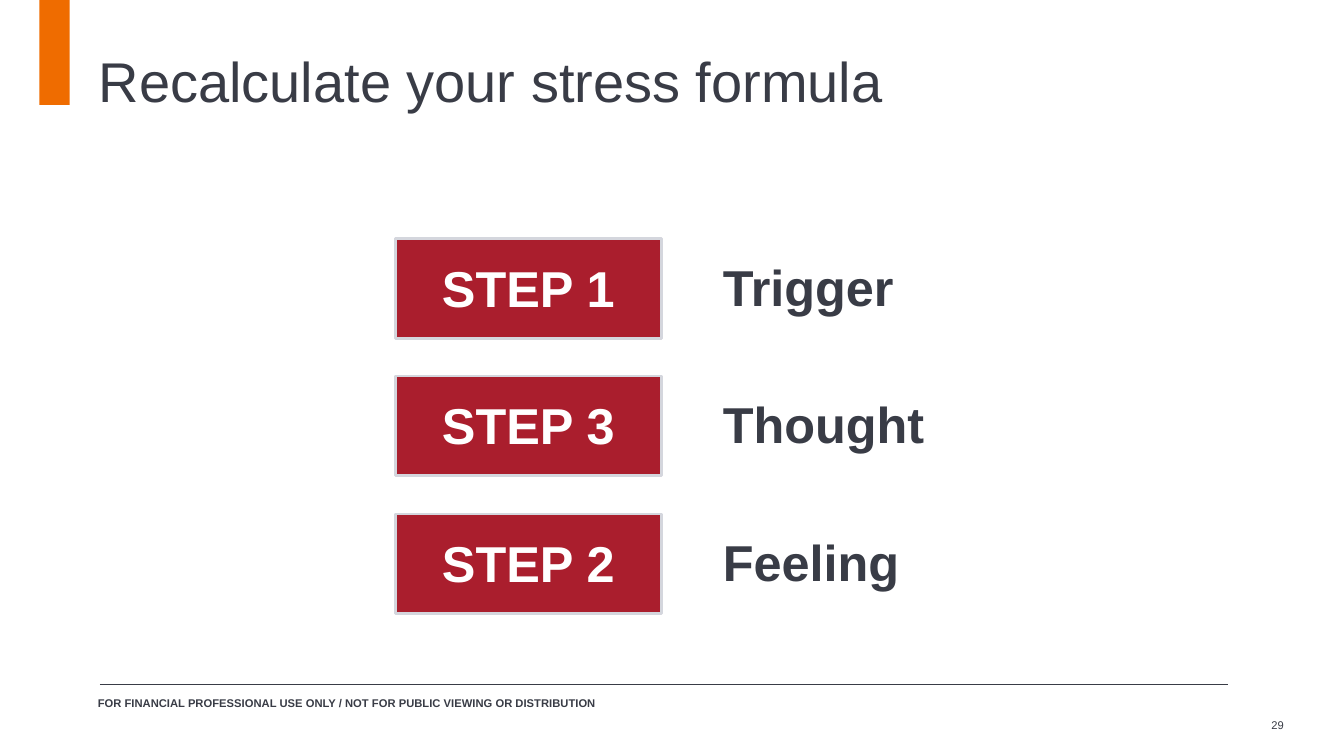
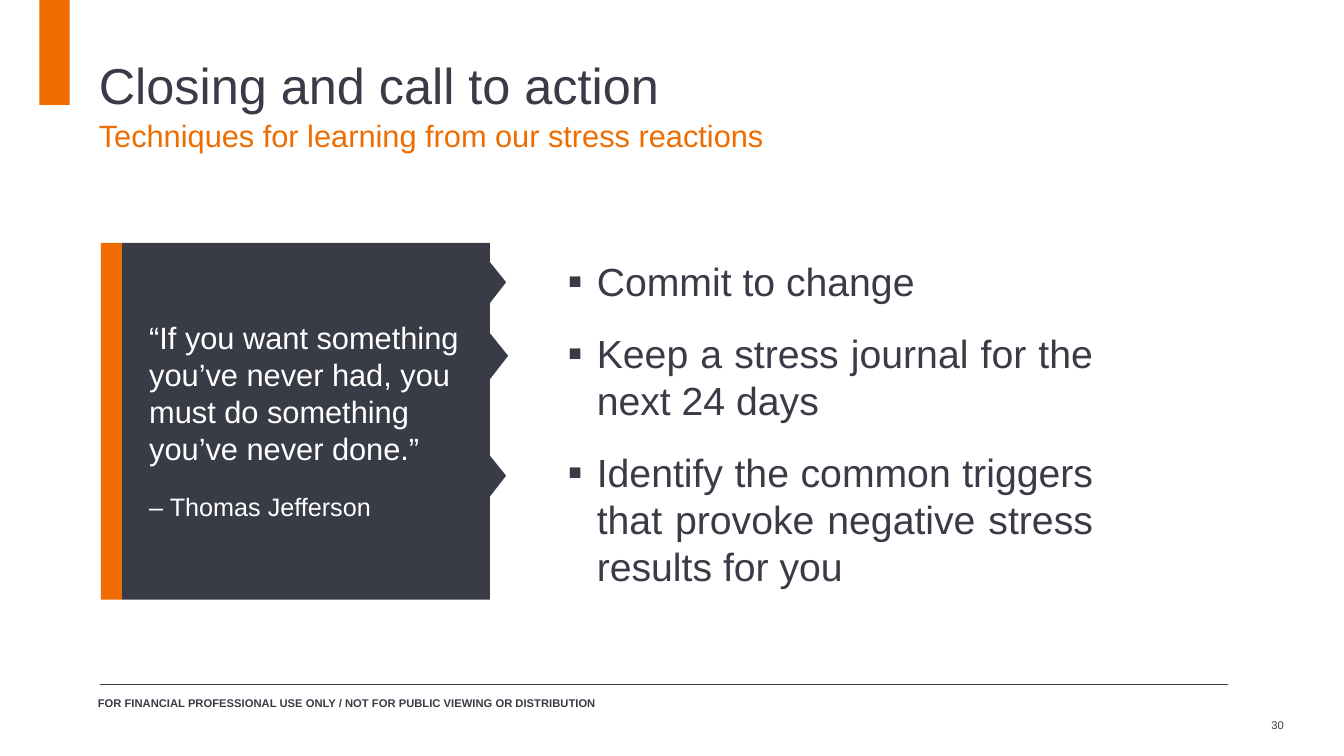
"""Build two slides on stress: the three steps and the closing call to action."""
from typing import NamedTuple

from lxml.etree import SubElement
from pptx import Presentation
from pptx.dml.color import RGBColor
from pptx.enum.shapes import MSO_CONNECTOR, MSO_SHAPE
from pptx.enum.text import MSO_ANCHOR, PP_ALIGN
from pptx.oxml.ns import qn
from pptx.shapes.autoshape import Shape
from pptx.slide import Slide
from pptx.util import Pt

SCALE = 9144
FONT = "Arial"
COLORS = {"ink": "393C46", "orange": "EF6C00", "red": "AA1E2D",
          "edge": "D4D6DD", "white": "FFFFFF"}
NOTICE = "FOR FINANCIAL PROFESSIONAL USE ONLY / NOT FOR PUBLIC VIEWING OR DISTRIBUTION"


class Box(NamedTuple):
    x: int
    y: int
    w: int
    h: int


class Line(NamedTuple):
    text: str
    size: int
    color: str = "ink"
    gap: float = 0


class Step(NamedTuple):
    tag: str
    label: str


class Notch(NamedTuple):
    x: int
    y: int


STEPS = [Step("STEP 1", "Trigger"), Step("STEP 3", "Thought"), Step("STEP 2", "Feeling")]
STEP_TOP, STEP_SPAN = 237, 273
NOTCHES = [Notch(481, 280), Notch(483, 353), Notch(481, 472)]
NOTCH_W, NOTCH_H = 21, 53
ACTIONS = ["Commit to change", "Keep a stress journal for the next 24 days",
           "Identify the common triggers that provoke negative stress results for you"]


def px(count: int) -> int:
    """Turn px into EMU."""
    return count * SCALE


def rgb(name: str) -> RGBColor:
    """Look up a named colour."""
    return RGBColor.from_string(COLORS[name])


def paint(shape: Shape, fill: str, edge: str = "") -> Shape:
    """Give a shape a flat fill and, if named, an edge."""
    shape.shadow.inherit = False
    shape.fill.solid()
    shape.fill.fore_color.rgb = rgb(fill)
    if edge:
        shape.line.color.rgb = rgb(edge)
        shape.line.width = Pt(2)
    else:
        shape.line.fill.background()
    return shape


def block(slide: Slide, box: Box, fill: str, edge: str = "") -> Shape:
    """Draw a filled rectangle."""
    shape = slide.shapes.add_shape(MSO_SHAPE.RECTANGLE, *map(px, box))
    return paint(shape, fill, edge)


def write(shape: Shape, lines: list[Line], *, top: int = 0, bold: bool = False,
          align: PP_ALIGN = PP_ALIGN.LEFT, bullet: str = "") -> None:
    """Fill a shape with formatted paragraphs."""
    frame = shape.text_frame
    frame.word_wrap = True
    frame.vertical_anchor = MSO_ANCHOR.TOP
    frame.margin_left = frame.margin_right = frame.margin_bottom = 0
    frame.margin_top = px(top)
    for index, line in enumerate(lines):
        para = frame.add_paragraph() if index else frame.paragraphs[0]
        para.text = line.text
        para.alignment = align
        if bullet:
            props = para._p.get_or_add_pPr()
            props.set("marL", str(px(31)))
            props.set("indent", str(px(-29)))
            SubElement(props, qn("a:buSzPct")).set("val", "109000")
            SubElement(props, qn("a:buFont")).set("typeface", FONT)
            SubElement(props, qn("a:buChar")).set("char", bullet)
        if line.gap:
            para.space_before = Pt(line.gap)
        font = para.font
        font.name = FONT
        font.size = Pt(line.size)
        font.bold = bold
        font.color.rgb = rgb(line.color)


def label(slide: Slide, box: Box, lines: list[Line], **style) -> None:
    """Add a text box."""
    write(slide.shapes.add_textbox(*map(px, box)), lines, **style)


def base(deck: Presentation, number: int, title: list[Line], top: int) -> Slide:
    """Add a slide with the shared band, title, rule and footer."""
    slide = deck.slides.add_slide(deck.slide_layouts[6])
    block(slide, Box(39, 0, 30, 104), "orange")
    rule = slide.shapes.add_connector(
        MSO_CONNECTOR.STRAIGHT, px(99), px(679), px(1218), px(679))
    rule.line.color.rgb = rgb("ink")
    rule.line.width = Pt(0.5)
    SubElement(rule._element.spPr, qn("a:effectLst"))
    label(slide, Box(98, 45, 1165, 111), title, top=top)
    label(slide, Box(97, 691, 520, 15), [Line(NOTICE, 8)], bold=True)
    label(slide, Box(1261, 713, 22, 15), [Line(str(number), 8)])
    return slide


def steps(deck: Presentation) -> None:
    """Draw the slide of three steps."""
    slide = base(deck, 29, [Line("Recalculate your stress formula", 40)], 1)
    for index, step in enumerate(STEPS):
        top = STEP_TOP + index * STEP_SPAN // 2
        tile = block(slide, Box(392, top, 264, 99), "red", "edge")
        write(tile, [Line(step.tag, 36, "white")], top=18, bold=True,
              align=PP_ALIGN.CENTER)
        label(slide, Box(717, top + 16, 250, 63), [Line(step.label, 36)],
              top=1, bold=True)


def closing(deck: Presentation) -> None:
    """Draw the closing slide with quote and actions."""
    title = [Line("Closing and call to action", 36),
             Line("Techniques for learning from our stress reactions", 22, "orange", 1.5)]
    slide = base(deck, 30, title, 9)
    block(slide, Box(121, 241, 365, 354), "ink")
    block(slide, Box(100, 241, 21, 354), "orange")
    for notch in NOTCHES:
        head = notch.y - NOTCH_H // 2
        path = slide.shapes.build_freeform(notch.x, head, scale=SCALE)
        path.add_line_segments([(notch.x + NOTCH_W, notch.y),
                                (notch.x, head + NOTCH_H)], close=True)
        paint(path.convert_to_shape(), "ink")
    quote = "“If you want something you’ve never had, you must do something you’ve never done.”"
    label(slide, Box(148, 315, 318, 205),
          [Line(quote, 22, "white"), Line("– Thomas Jefferson", 18, "white", 18)], top=1)
    label(slide, Box(561, 235, 523, 352),
          [Line(item, 28, gap=18 if index else 0) for index, item in enumerate(ACTIONS)],
          top=20, align=PP_ALIGN.JUSTIFY, bullet="▪")


def main() -> None:
    """Build and save the deck."""
    deck = Presentation()
    deck.slide_width, deck.slide_height = px(1333), px(750)
    steps(deck)
    closing(deck)
    deck.save("out.pptx")


if __name__ == "__main__":
    main()
